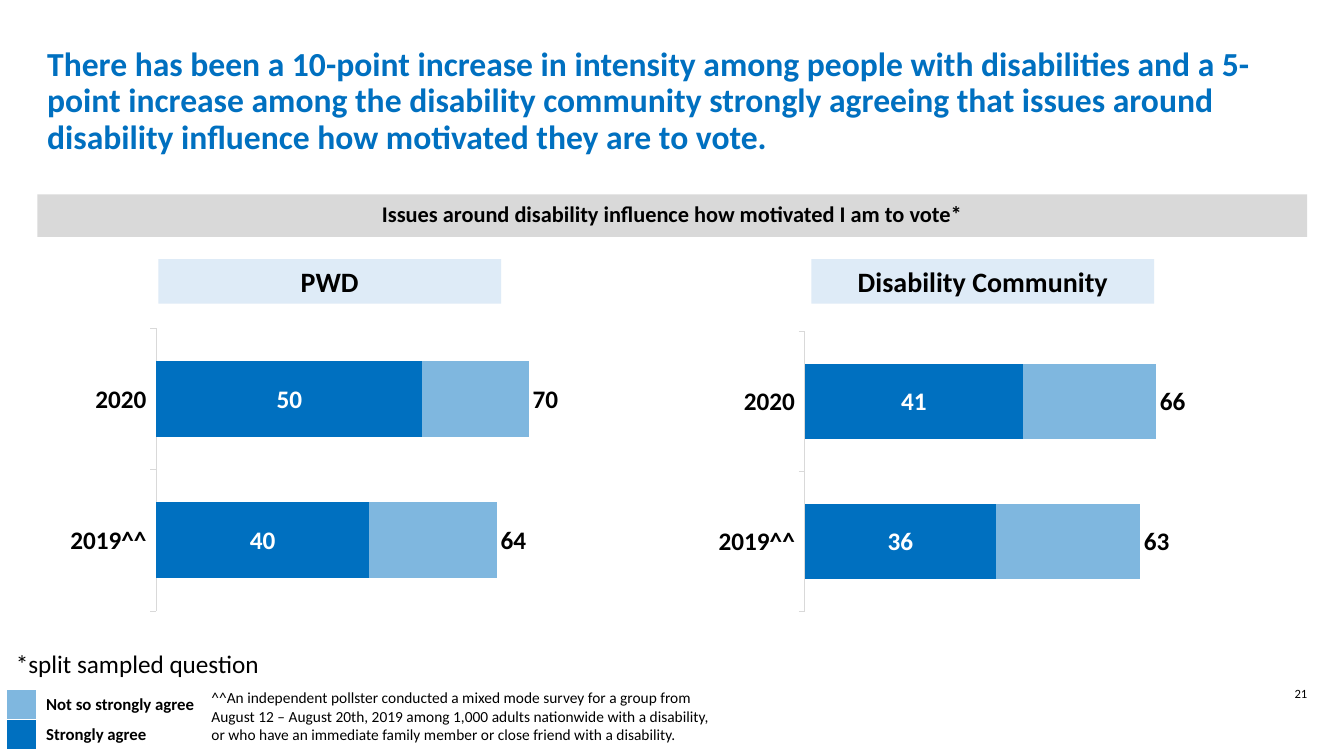
from dataclasses import dataclass

from lxml import etree
from pptx import Presentation
from pptx.chart.data import CategoryChartData
from pptx.dml.color import RGBColor
from pptx.enum.chart import XL_CHART_TYPE, XL_LABEL_POSITION, XL_TICK_MARK
from pptx.enum.shapes import MSO_SHAPE
from pptx.enum.text import MSO_ANCHOR, PP_ALIGN
from pptx.oxml import parse_xml
from pptx.oxml.ns import nsdecls, qn
from pptx.util import Cm, Pt

STACKED_BAR = XL_CHART_TYPE.BAR_STACKED
INSIDE_BASE = XL_LABEL_POSITION.INSIDE_BASE
CENTER_LABEL = XL_LABEL_POSITION.CENTER
TICK_OUT, TICK_NONE = XL_TICK_MARK.OUTSIDE, XL_TICK_MARK.NONE
RECTANGLE = MSO_SHAPE.RECTANGLE
TOP, MIDDLE = MSO_ANCHOR.TOP, MSO_ANCHOR.MIDDLE
LEFT, CENTER = PP_ALIGN.LEFT, PP_ALIGN.CENTER


@dataclass(frozen=True)
class Theme:
    """Colours, font and type sizes of the slide."""

    font: str = "Calibri"
    black: str = "000000"
    white: str = "FFFFFF"
    strong: str = "0070C0"
    mild: str = "7FB7DF"
    banner: str = "D9D9D9"
    heading: str = "DEEBF7"
    title_size: int = 24
    heading_size: int = 20
    body_size: int = 18
    banner_size: int = 16
    legend_size: int = 12
    note_size: int = 11
    chart_size: int = 10
    number_size: int = 9


THEME = Theme()
YEARS = ("2020", "2019^^")
LEGEND = (("Not so strongly agree", THEME.mild), ("Strongly agree", THEME.strong))
TITLE = (
    "There has been a 10-point increase in intensity among people with disabilities "
    "and a 5-point increase among the disability community strongly agreeing that "
    "issues around disability influence how motivated they are to vote."
)
SURVEY_NOTE = (
    "^^An independent pollster conducted a mixed mode survey for a group from "
    "August 12 – August 20th, 2019 among 1,000 adults nationwide with a disability, "
    "or who have an immediate family member or close friend with a disability."
)


def style_font(font, size, color=THEME.black, bold=False):
    """Set the typeface, size, colour and weight of a font."""
    font.name = THEME.font
    font.size = Pt(size)
    font.bold = bold
    font.color.rgb = RGBColor.from_string(color)


def fill_solid(fill, color):
    """Give a fill one solid colour."""
    fill.solid()
    fill.fore_color.rgb = RGBColor.from_string(color)


def write_text(frame, text, size, color=THEME.black, bold=False,
               align=LEFT, anchor=TOP, spacing=1.0):
    """Write one wrapped, formatted paragraph into a text frame."""
    frame.text = text
    frame.word_wrap = True
    frame.vertical_anchor = anchor
    paragraph = frame.paragraphs[0]
    paragraph.alignment = align
    paragraph.line_spacing = spacing
    for run in paragraph.runs:
        style_font(run.font, size, color, bold)


def add_text(slide, box, text, size, **style):
    """Add a plain text box."""
    shape = slide.shapes.add_textbox(*map(Cm, box))
    write_text(shape.text_frame, text, size, **style)


def add_panel(slide, box, fill, text, size, **style):
    """Add a filled rectangle with text."""
    shape = slide.shapes.add_shape(RECTANGLE, *map(Cm, box))
    shape.shadow.inherit = False
    fill_solid(shape.fill, fill)
    shape.line.fill.background()
    write_text(shape.text_frame, text, size, **style)


def label_series(series, position, color):
    """Show the values of a series as bold labels."""
    labels = series.data_labels
    labels.show_value = True
    labels.position = position
    style_font(labels.font, THEME.body_size, color, True)


def set_plot_area(chart, left, top, width, height):
    """Fix the inner plot area as fractions of the chart."""
    plot_area = chart.plots[0]._element.getparent()
    for layout in plot_area.findall(qn("c:layout")):
        plot_area.remove(layout)
    layout = parse_xml(f'<c:layout {nsdecls("c")}><c:manualLayout/></c:layout>')
    settings = (("layoutTarget", "inner"), ("xMode", "edge"), ("yMode", "edge"),
                ("x", left), ("y", top), ("w", width), ("h", height))
    for name, value in settings:
        etree.SubElement(layout[0], qn(f"c:{name}")).set("val", str(value))
    plot_area.insert(0, layout)


def add_agreement_chart(slide, box, strong, mild):
    """Add stacked bars per year, with the total written at the bar end."""
    totals = [sum(pair) for pair in zip(strong, mild)]
    data = CategoryChartData()
    data.categories = YEARS
    for number, values in enumerate((strong, mild, totals), start=1):
        data.add_series(f"Series {number}", values)
    chart = slide.shapes.add_chart(STACKED_BAR, *map(Cm, box), data).chart
    chart.has_legend = False
    chart.has_title = False
    style_font(chart.font, THEME.chart_size)
    plot = chart.plots[0]
    plot.gap_width = 86
    plot.overlap = 100
    plot.vary_by_categories = False

    strong_series, mild_series, total_series = plot.series
    fill_solid(strong_series.format.fill, THEME.strong)
    fill_solid(mild_series.format.fill, THEME.mild)
    total_series.format.fill.background()
    label_series(strong_series, CENTER_LABEL, THEME.white)
    label_series(total_series, INSIDE_BASE, THEME.black)

    years = chart.category_axis
    years.reverse_order = True
    years.has_major_gridlines = False
    years.major_tick_mark = TICK_OUT
    years.minor_tick_mark = TICK_NONE
    years.format.line.width = Pt(0.75)
    years.format.line.color.rgb = RGBColor.from_string(THEME.banner)
    style_font(years.tick_labels.font, THEME.body_size, bold=True)

    values = chart.value_axis
    values.minimum_scale, values.maximum_scale = 0, 100
    values.has_major_gridlines = False
    values.visible = False
    set_plot_area(chart, 0.15, 0.02, 0.83, 0.96)


def add_borders(cell):
    """Draw white borders on all sides of a table cell."""
    properties = cell._tc.get_or_add_tcPr()
    for side in ("lnL", "lnR", "lnT", "lnB"):
        properties.append(parse_xml(
            f'<a:{side} {nsdecls("a")} w="12700"><a:solidFill>'
            f'<a:srgbClr val="{THEME.white}"/></a:solidFill></a:{side}>'))


def add_legend(slide):
    """Add the colour key as a table of swatches and names."""
    frame = slide.shapes.add_table(len(LEGEND), 2, Cm(0.15), Cm(17.37), Cm(5.46), Cm(1.52))
    table = frame.table
    table.first_row = False
    table.horz_banding = False
    table.columns[0].width, table.columns[1].width = Cm(0.76), Cm(4.7)
    for row, (name, color) in enumerate(LEGEND):
        swatch, label = table.cell(row, 0), table.cell(row, 1)
        add_borders(swatch)
        add_borders(label)
        fill_solid(swatch.fill, color)
        label.fill.background()
        ending = etree.SubElement(swatch.text_frame.paragraphs[0]._p, qn("a:endParaRPr"))
        ending.set("sz", str(THEME.legend_size * 100))
        write_text(label.text_frame, name, THEME.legend_size, bold=True)


def main():
    """Build and save the slide."""
    presentation = Presentation()
    presentation.slide_width, presentation.slide_height = Cm(33.87), Cm(19.05)
    slide = presentation.slides.add_slide(presentation.slide_layouts[6])
    add_text(slide, (31.83, 17.15, 1.91, 0.84), "21", THEME.number_size, align=CENTER)
    add_text(slide, (0.94, 0.74, 32, 3.66), TITLE, THEME.title_size,
             color=THEME.strong, bold=True, anchor=MIDDLE, spacing=0.9)
    add_panel(slide, (0.94, 4.9, 32, 1.07), THEME.banner,
              "Issues around disability influence how motivated I am to vote*",
              THEME.banner_size, bold=True, align=CENTER, anchor=MIDDLE, spacing=0.9)
    groups = (
        ("PWD", 3.99, (1.52, 8.13, 16.15, 7.42), (50, 40), (20, 24)),
        ("Disability Community", 20.45, (17.86, 8.2, 16.15, 7.37), (41, 36), (25, 27)),
    )
    for name, left, chart_box, strong, mild in groups:
        add_panel(slide, (left, 6.53, 8.64, 1.12), THEME.heading, name,
                  THEME.heading_size, bold=True, align=CENTER)
        add_agreement_chart(slide, chart_box, strong, mild)
    add_legend(slide)
    add_text(slide, (0.15, 16.21, 8.64, 1.02), "*split sampled question", THEME.body_size)
    add_panel(slide, (5.08, 17.22, 13.21, 1.68), THEME.white, SURVEY_NOTE, THEME.note_size)
    presentation.save("out.pptx")


if __name__ == "__main__":
    main()
